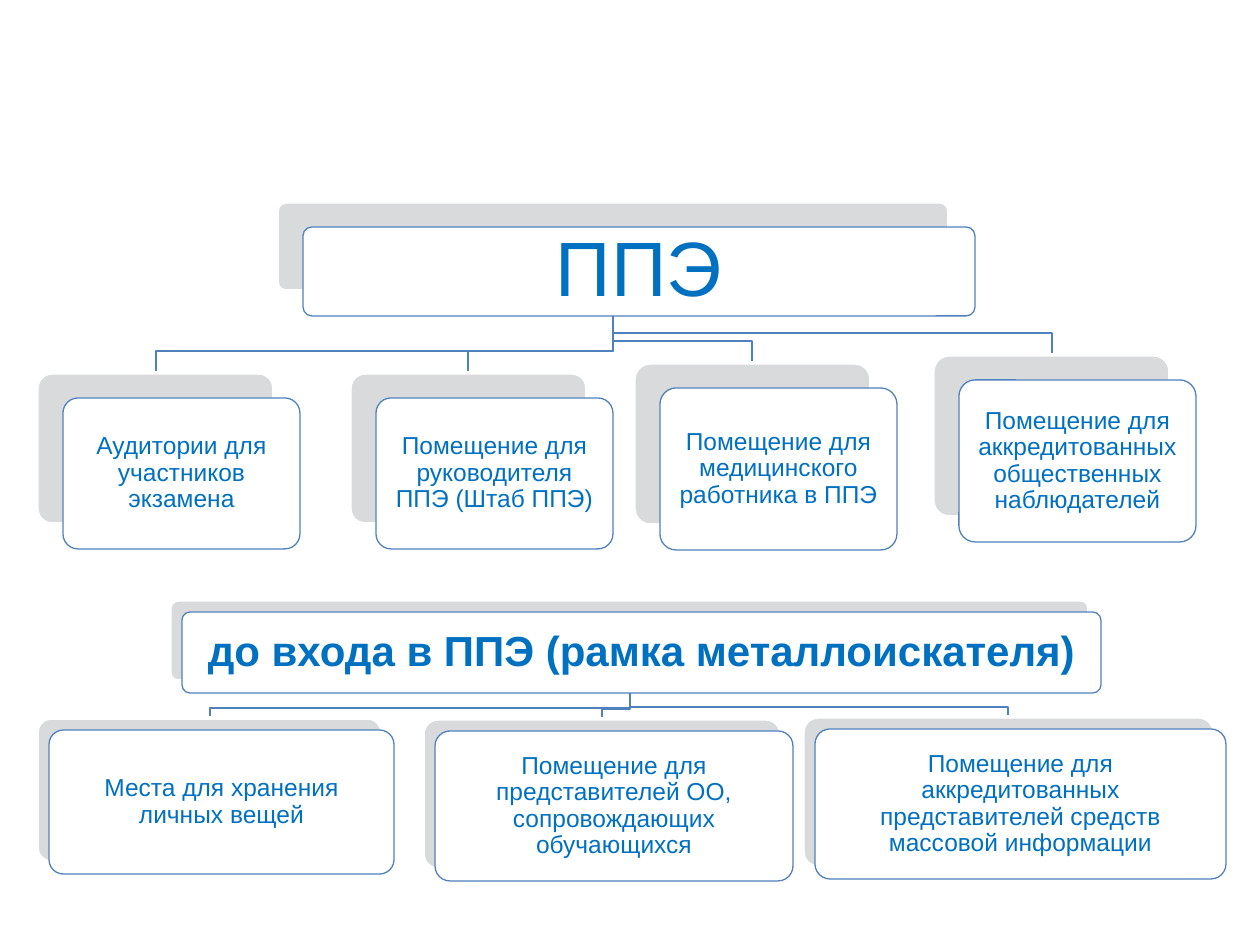
from collections import namedtuple

from pptx import Presentation
from pptx.dml.color import RGBColor
from pptx.enum.shapes import MSO_SHAPE
from pptx.enum.text import MSO_ANCHOR, PP_ALIGN
from pptx.util import Pt

ROUNDED = MSO_SHAPE.ROUNDED_RECTANGLE
MIDDLE = MSO_ANCHOR.MIDDLE
CENTER = PP_ALIGN.CENTER

PX = 914400 / 126
WHITE = RGBColor(0xFF, 0xFF, 0xFF)
GREY = RGBColor(0xD9, 0xDA, 0xDB)
OUTLINE = RGBColor(0x4F, 0x81, 0xBD)
BLUE = RGBColor(0x00, 0x70, 0xC0)
FONT = "Arial"

Box = namedtuple("Box", "left top width height")
Style = namedtuple("Style", "size bold inset")

CARD_STYLE = Style(14, False, 8)

ROOMS = [
    (Box(37, 373, 237, 151), "Аудитории для участников экзамена"),
    (Box(350, 373, 237, 151), "Помещение для руководителя ППЭ (Штаб ППЭ)"),
    (Box(634, 363, 237, 162), "Помещение для медицинского работника в ППЭ"),
    (Box(933, 355, 237, 162),
     "Помещение для аккредитованных общественных наблюдателей"),
]
ENTRANCE_ROOMS = [
    (Box(37, 718, 345, 144), "Места для хранения личных вещей"),
    (Box(423, 719, 358, 150),
     "Помещение для представителей ОО, сопровождающих обучающихся"),
    (Box(803, 717, 411, 150),
     "Помещение для аккредитованных представителей средств массовой информации"),
]


def emu(px):
    return round(px * PX)


def add_branch(shapes, parent, child, drop):
    trunk_x = parent.left + parent.width / 2
    trunk_y = parent.top + parent.height
    child_x = child.left + child.width / 2
    bend_y = child.top - drop
    builder = shapes.build_freeform(trunk_x, trunk_y, scale=PX)
    builder.add_line_segments(
        [(trunk_x, bend_y), (child_x, bend_y), (child_x, child.top)], close=False)
    branch = builder.convert_to_shape()
    branch.shadow.inherit = False
    branch.fill.background()
    branch.line.color.rgb = OUTLINE
    branch.line.width = Pt(0.75)


def add_panel(shapes, box, fill, line, line_width):
    panel = shapes.add_shape(ROUNDED, *map(emu, box))
    panel.adjustments[0] = 0.1
    panel.shadow.inherit = False
    panel.fill.solid()
    panel.fill.fore_color.rgb = fill
    panel.line.color.rgb = line
    panel.line.width = Pt(line_width)
    return panel


def add_card(shapes, box, offset, text, style):
    add_panel(shapes, box, GREY, WHITE, 2)
    dx, dy = offset
    front = box._replace(left=box.left + dx, top=box.top + dy)
    frame = add_panel(shapes, front, WHITE, OUTLINE, 0.75).text_frame
    frame.word_wrap = True
    frame.vertical_anchor = MIDDLE
    frame.margin_left = frame.margin_right = emu(style.inset)
    frame.margin_top = frame.margin_bottom = emu(style.inset)
    paragraph = frame.paragraphs[0]
    paragraph.alignment = CENTER
    paragraph.line_spacing = 0.9
    run = paragraph.add_run()
    run.text = text
    run.font.name = FONT
    run.font.size = Pt(style.size)
    run.font.bold = style.bold
    run.font.color.rgb = BLUE


def add_tree(slide, heading_box, heading, heading_style, rooms, offset, drop):
    shapes = slide.shapes.add_group_shape().shapes
    for box, _ in reversed(rooms):
        add_branch(shapes, heading_box, box, drop)
    add_card(shapes, heading_box, offset, heading, heading_style)
    for box, room in rooms:
        add_card(shapes, box, offset, room, CARD_STYLE)


def main():
    deck = Presentation()
    deck.slide_width = emu(1260)
    deck.slide_height = emu(945)
    slide = deck.slides.add_slide(deck.slide_layouts[6])
    add_tree(slide, Box(277, 202, 672, 89), "ППЭ",
             Style(44, False, 23), ROOMS, (26, 25), 22)
    add_tree(slide, Box(170, 600, 919, 81), "до входа в ППЭ (рамка металлоискателя)",
             Style(24, True, 13), ENTRANCE_ROOMS, (12, 12), 10)
    deck.save("out.pptx")


if __name__ == "__main__":
    main()
